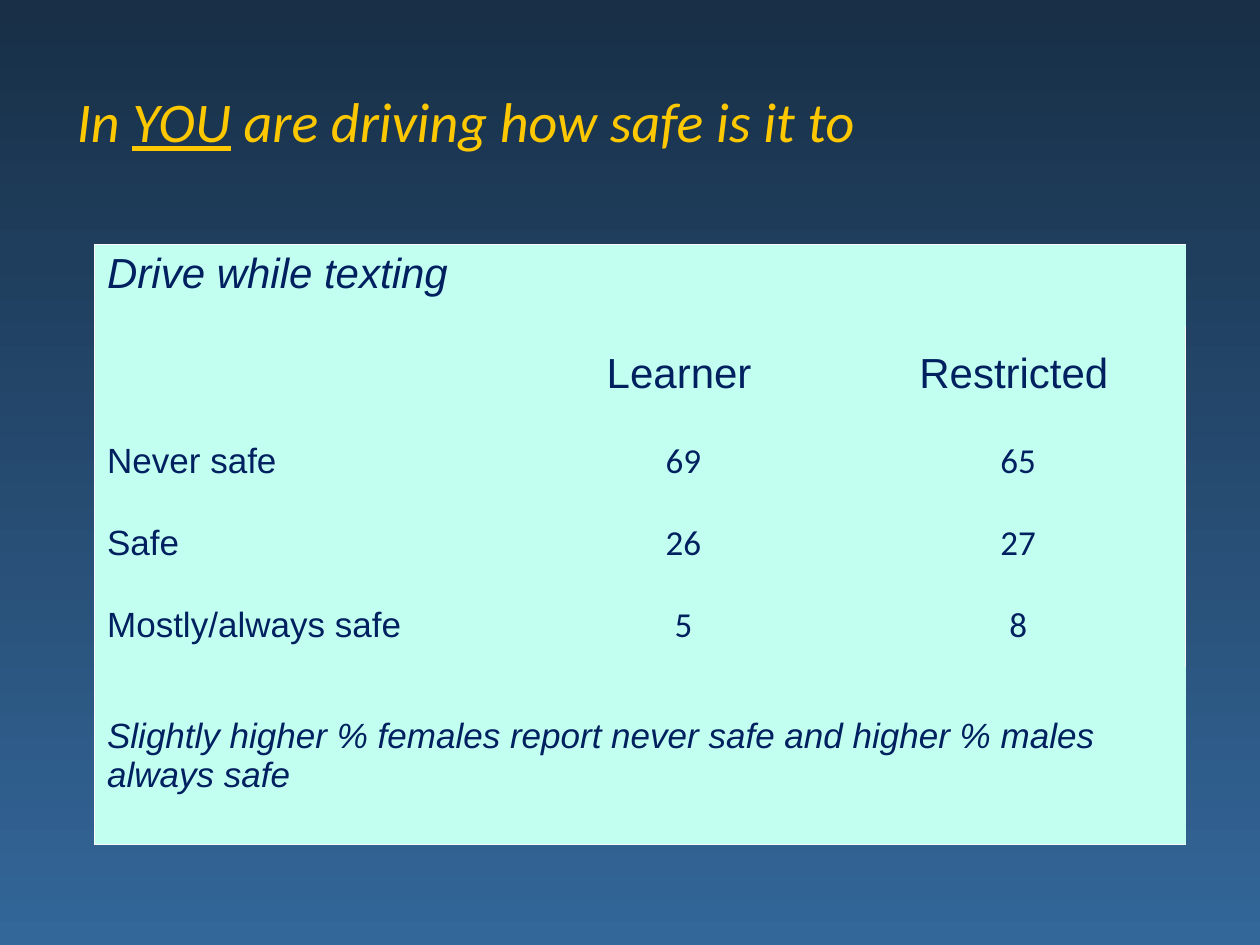
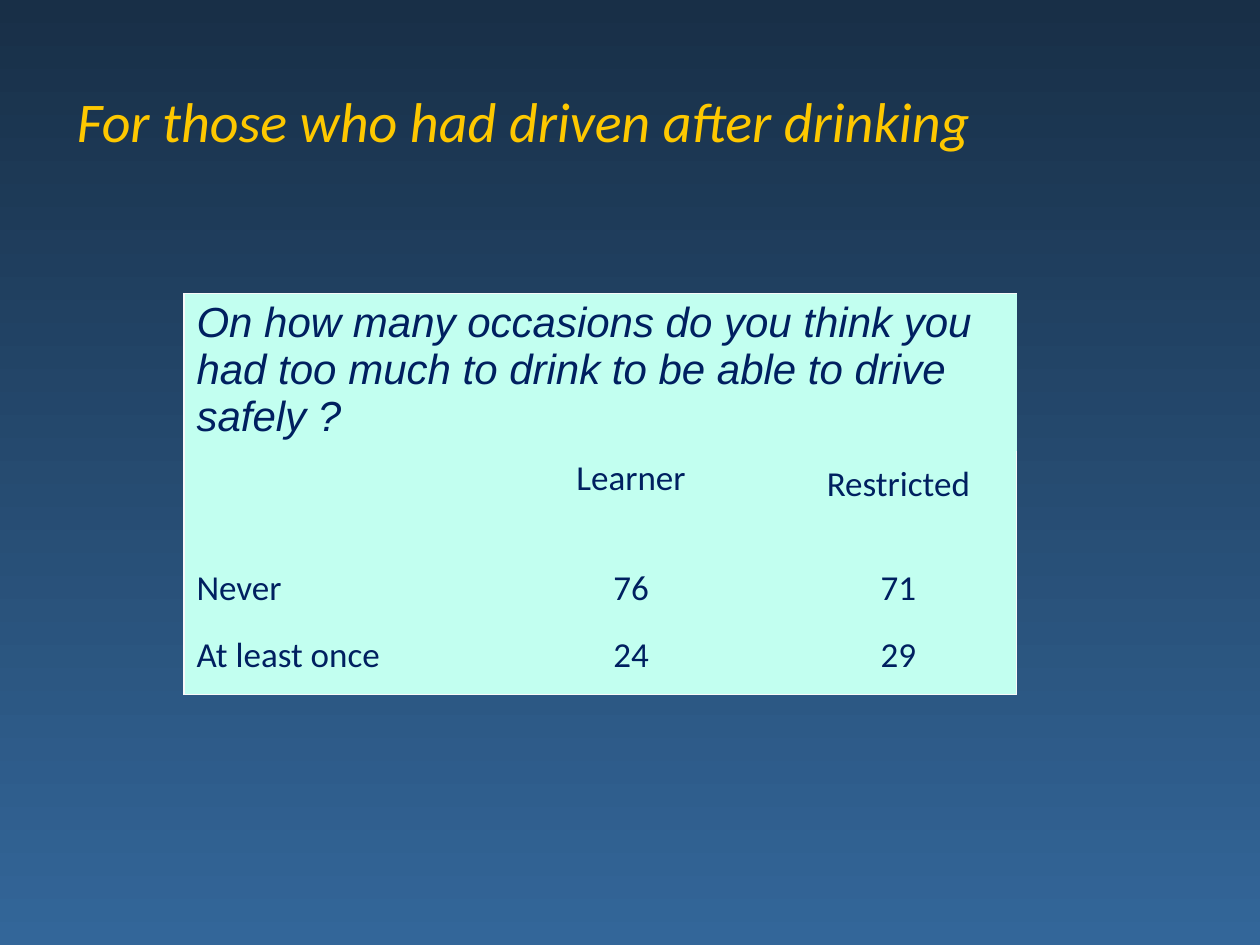
from lxml.etree import SubElement
from pptx import Presentation
from pptx.dml.color import RGBColor
from pptx.enum.text import MSO_ANCHOR as Anchor, PP_ALIGN as Align
from pptx.oxml.ns import qn
from pptx.util import Inches, Pt

WIDTH, HEIGHT = 10, 7.5
NIGHT, BLUE, GOLD = "182F47", "336699", "FEC800"
MINT, NAVY, EDGE = "C2FFF0", "002060", "F9F9F9"
SANS, BODY = "Arial", "Calibri"

# Cell formats
QUESTION = dict(size=24, font=SANS, italic=True, anchor=Anchor.TOP)
NOTE = dict(font=SANS, italic=True)
LABEL = dict(font=SANS)
VALUE = dict(align=Align.CENTER)
HEADING = dict(size=24, font=SANS, align=Align.CENTER, right=0.17)


def color(hex_string):
    return RGBColor.from_string(hex_string)


def write(frame, text, size=20, font=BODY, ink=NAVY, italic=False,
          align=Align.LEFT, underlined=""):
    """Write one paragraph, underlining the given word if there is one."""
    para = frame.paragraphs[0]
    para.alignment = align
    before, word, after = text.partition(underlined) if underlined else (text, "", "")
    for part in filter(None, (before, word, after)):
        span = para.add_run()
        span.text = part
        span.font.size, span.font.name = Pt(size), font
        span.font.italic, span.font.bold = italic, False
        span.font.underline = bool(word) and part == word
        span.font.color.rgb = color(ink)


def paint_background(master):
    fill = master.background.fill
    fill.gradient()
    fill.gradient_angle = 270
    for stop, shade in zip(fill.gradient_stops, (NIGHT, BLUE)):
        stop.color.rgb = color(shade)


def add_page(deck, title, **style):
    page = deck.slides.add_slide(deck.slide_layouts[5])
    holder = page.shapes.title
    holder.left, holder.top = Inches(0.051 * WIDTH), Inches(0.044 * HEIGHT)
    holder.width, holder.height = Inches(0.898 * WIDTH), Inches(HEIGHT / 6)
    holder.text_frame.vertical_anchor = Anchor.MIDDLE
    write(holder.text_frame, title, size=32, ink=GOLD, italic=True, **style)
    return page


def border_cell(cell, outer_sides):
    """Draw a thin line on the outer sides and none on the others."""
    properties = cell._tc.get_or_add_tcPr()
    for side in "LRTB":
        line = SubElement(properties, qn(f"a:ln{side}"), w=str(Pt(0.75)))
        if side in outer_sides:
            fill = SubElement(line, qn("a:solidFill"))
            SubElement(fill, qn("a:srgbClr"), val=EDGE)
        else:
            SubElement(line, qn("a:noFill"))


def fill_cell(cell, text, anchor=Anchor.MIDDLE, right=0.1, **style):
    cell.vertical_anchor = anchor
    cell.margin_right = Inches(right)
    if text:
        write(cell.text_frame, text, **style)


def add_survey_table(page, box, columns, rows):
    """Each row is (height, texts, formats); a single text spans the row."""
    left, top, width, height = box
    table = page.shapes.add_table(len(rows), len(columns), Inches(left), Inches(top),
                                  Inches(width), Inches(height)).table
    table.first_row = table.horz_banding = False
    for column, share in zip(table.columns, columns):
        column.width = Inches(width * share / sum(columns))

    last_row, last_column = len(rows) - 1, len(columns) - 1
    total = sum(row[0] for row in rows)
    for r, (share, texts, formats) in enumerate(rows):
        table.rows[r].height = Inches(height * share / total)
        for c in range(len(columns)):
            cell = table.cell(r, c)
            outer = {"L": c == 0, "R": c == last_column, "T": r == 0, "B": r == last_row}
            border_cell(cell, [side for side in outer if outer[side]])
            cell.fill.solid()
            cell.fill.fore_color.rgb = color(MINT)
        if len(texts) == 1:
            table.cell(r, 0).merge(table.cell(r, last_column))
        for c, (text, style) in enumerate(zip(texts, formats)):
            fill_cell(table.cell(r, c), text, **style)


def build_texting_page(deck):
    page = add_page(deck, "In YOU are driving how safe is it to", underlined="YOU")
    answers = [("Never safe", "69", "65"), ("Safe", "26", "27"),
               ("Mostly/always safe", "5", "8")]
    note = "Slightly higher % females report never safe and higher % males always safe"
    rows = [(0.65, ["Drive while texting"], [QUESTION]),
            (0.75, ["", "Learner", "Restricted"], [LABEL, HEADING, HEADING]),
            *((0.65, answer, [LABEL, VALUE, VALUE]) for answer in answers),
            (1.41, [note], [NOTE])]
    add_survey_table(page, (0.75, 1.94, 8.66, 4.76), (3.35, 2.66, 2.66), rows)


def build_drinking_page(deck):
    page = add_page(deck, "For those who had driven after drinking")
    question = ("On how many occasions do you think you had too much to drink "
                "to be able to drive safely ?")
    low, low_value = dict(anchor=Anchor.BOTTOM), dict(VALUE, anchor=Anchor.BOTTOM)
    rows = [(1.25, [question], [QUESTION]),
            (0.53, ["", "Learner", "Restricted"],
             [{}, dict(VALUE, anchor=Anchor.TOP), VALUE]),
            (0.78, ["Never", "76", "71"], [low, low_value, low_value]),
            (0.62, ["At least once", "24", "29"], [{}, VALUE, VALUE])]
    add_survey_table(page, (1.46, 2.33, 6.61, 3.18), (2.37, 2.37, 1.88), rows)


def main():
    deck = Presentation()
    deck.slide_width, deck.slide_height = Inches(WIDTH), Inches(HEIGHT)
    paint_background(deck.slide_master)
    build_texting_page(deck)
    build_drinking_page(deck)
    deck.save("out.pptx")


if __name__ == "__main__":
    main()
